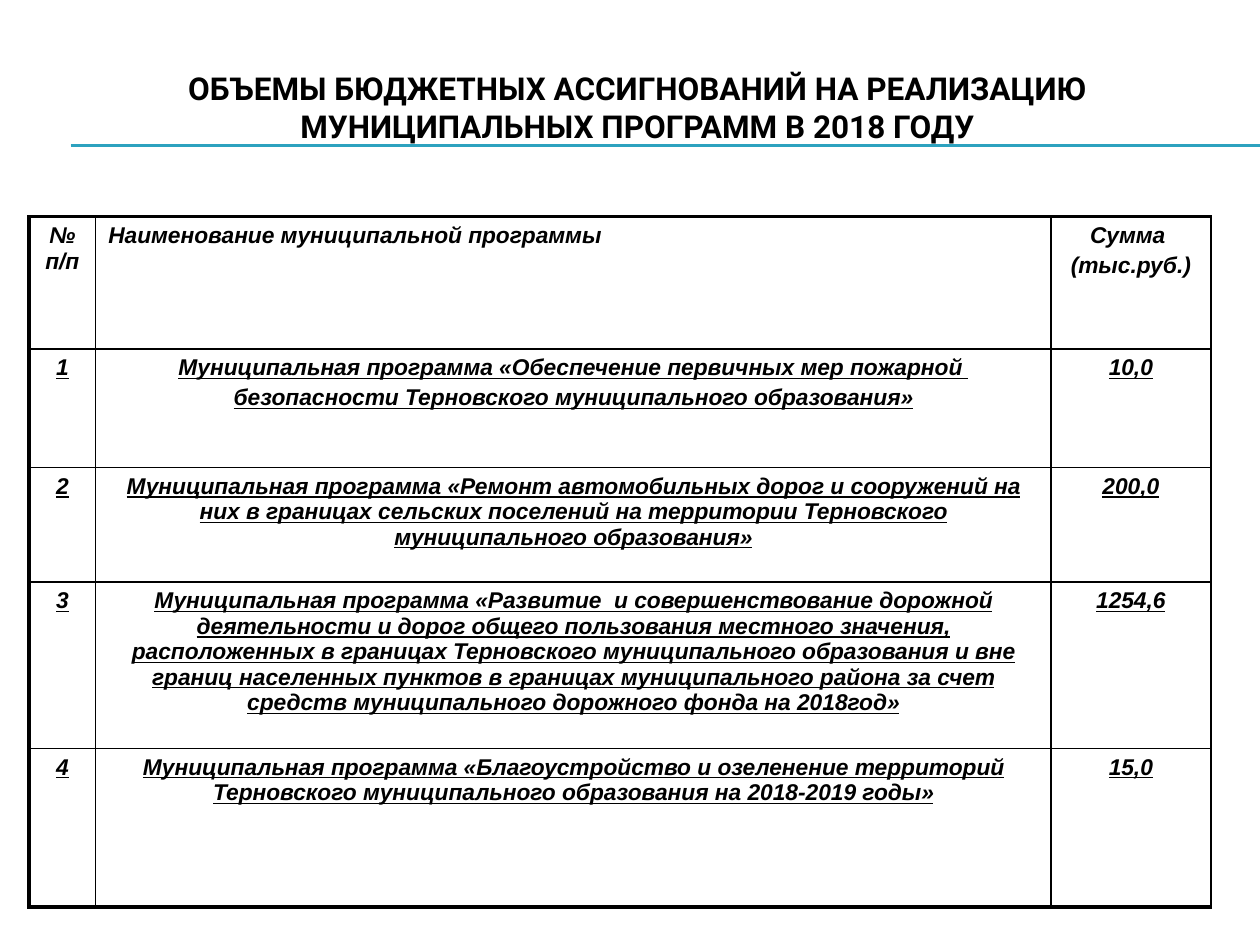
from dataclasses import dataclass

from lxml.etree import SubElement
from pptx import Presentation
from pptx.dml.color import RGBColor
from pptx.enum.text import MSO_ANCHOR, MSO_AUTO_SIZE, PP_ALIGN
from pptx.enum.shapes import MSO_CONNECTOR
from pptx.oxml.ns import qn
from pptx.slide import Slide
from pptx.table import _Cell
from pptx.util import Inches, Pt

BLACK = RGBColor(0x00, 0x00, 0x00)
TEAL = RGBColor(0x2D, 0xA2, 0xBF)
THIN, THICK = 1, 2.25


@dataclass
class Program:
    number: str
    name: str
    amount: str
    height: float


HEADER = Program("№ п/п", "Наименование муниципальной программы", "Сумма \n(тыс.руб.)", 1.05)
PROGRAMS = [
    Program("1", "Муниципальная программа «Обеспечение первичных мер пожарной \n"
            "безопасности Терновского муниципального образования»", "10,0", 0.94),
    Program("2", "Муниципальная программа «Ремонт автомобильных дорог и сооружений на них "
            "в границах сельских поселений на территории Терновского муниципального "
            "образования»", "200,0", 0.91),
    Program("3", "Муниципальная программа «Развитие  и совершенствование дорожной "
            "деятельности и дорог общего пользования местного значения, расположенных "
            "в границах Терновского муниципального образования и вне границ населенных "
            "пунктов в границах муниципального района за счет средств муниципального "
            "дорожного фонда на 2018год»", "1254,6", 1.32),
    Program("4", "Муниципальная программа «Благоустройство и озеленение территорий "
            "Терновского муниципального образования на 2018-2019 годы»", "15,0", 1.26),
]
COLUMN_WIDTHS = [0.53, 7.58, 1.27]


def add_rule(slide: Slide, y: float) -> None:
    rule = slide.shapes.add_connector(
        MSO_CONNECTOR.STRAIGHT, Inches(0.56), Inches(y), Inches(10), Inches(y))
    rule.line.color.rgb = TEAL
    rule.line.width = Pt(0.75)
    SubElement(rule._element.spPr, qn("a:effectLst"))


def set_borders(cell: _Cell, widths: dict[str, float]) -> None:
    properties = cell._tc.get_or_add_tcPr()
    for position, (side, width) in enumerate(widths.items()):
        border = properties.makeelement(qn(f"a:{side}"), {"w": str(Pt(width))})
        fill = SubElement(border, qn("a:solidFill"))
        SubElement(fill, qn("a:srgbClr"), val=str(BLACK))
        properties.insert(position, border)


def fill_cell(cell: _Cell, text: str, align: PP_ALIGN, underline: bool) -> None:
    cell.fill.background()
    cell.text = text
    for paragraph in cell.text_frame.paragraphs:
        paragraph.alignment = align
        paragraph.space_before = Pt(2.6)
        font = paragraph.font
        font.name, font.size = "Arial", Pt(13)
        font.bold = font.italic = True
        font.underline = underline
        font.color.rgb = BLACK


def add_program_table(slide: Slide, rows: list[Program]) -> None:
    table = slide.shapes.add_table(
        len(rows), len(COLUMN_WIDTHS), Inches(0.23), Inches(1.72),
        Inches(sum(COLUMN_WIDTHS)), Inches(sum(row.height for row in rows))).table
    table.first_row = table.horz_banding = False
    for column, width in zip(table.columns, COLUMN_WIDTHS):
        column.width = Inches(width)
    last = len(rows) - 1
    for r, program in enumerate(rows):
        table.rows[r].height = Inches(program.height)
        for c, text in enumerate((program.number, program.name, program.amount)):
            cell = table.cell(r, c)
            # The name heading alone is set to the left
            align = PP_ALIGN.LEFT if (r, c) == (0, 1) else PP_ALIGN.CENTER
            fill_cell(cell, text, align, underline=r > 0)
            set_borders(cell, {
                "lnL": THICK if c == 0 else THIN,
                "lnR": THIN,
                "lnT": THICK if r == 0 else THIN,
                "lnB": THICK if r == last else THIN,
            })


def add_title(slide: Slide, text: str) -> None:
    title = slide.shapes.title
    title.left, title.top = Inches(0.31), Inches(0.39)
    title.width, title.height = Inches(9.5), Inches(0.92)
    frame = title.text_frame
    frame.text = text
    frame.word_wrap = True
    frame.auto_size = MSO_AUTO_SIZE.NONE
    frame.vertical_anchor = MSO_ANCHOR.MIDDLE
    heading = frame.paragraphs[0]
    heading.alignment = PP_ALIGN.CENTER
    heading.font.name, heading.font.size = "Roboto", Pt(18)
    heading.font.bold = True
    heading.font.color.rgb = BLACK


def main() -> None:
    presentation = Presentation()
    presentation.slide_width, presentation.slide_height = Inches(10), Inches(7.5)
    slide = presentation.slides.add_slide(presentation.slide_layouts[5])

    # Heading with its double rule
    for y in (1.15, 1.16):
        add_rule(slide, y)
    add_title(slide, "ОБЪЕМЫ БЮДЖЕТНЫХ АССИГНОВАНИЙ НА РЕАЛИЗАЦИЮ "
                     "МУНИЦИПАЛЬНЫХ ПРОГРАММ В 2018 ГОДУ")

    # Budget by program
    add_program_table(slide, [HEADER, *PROGRAMS])
    presentation.save("out.pptx")


if __name__ == "__main__":
    main()
